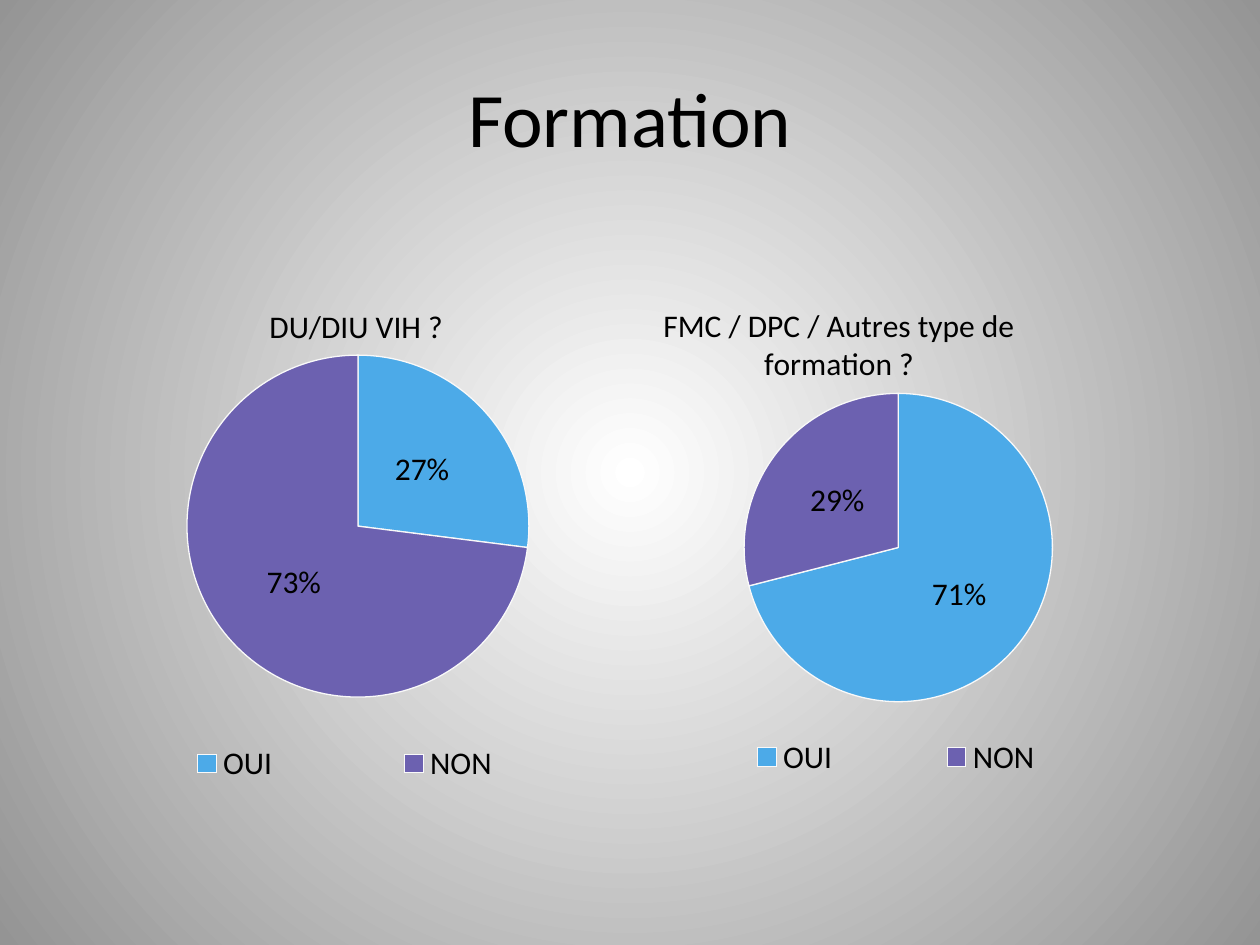
from dataclasses import dataclass

from lxml.etree import SubElement
from pptx import Presentation
from pptx.chart.data import CategoryChartData
from pptx.dml.color import RGBColor
from pptx.enum.chart import XL_CHART_TYPE, XL_LABEL_POSITION, XL_LEGEND_POSITION
from pptx.enum.text import MSO_ANCHOR, PP_ALIGN
from pptx.oxml import parse_xml
from pptx.oxml.ns import nsdecls, qn
from pptx.util import Cm, Pt


@dataclass(frozen=True)
class Theme:
    font: str = "Calibri"
    text: RGBColor = RGBColor(0, 0, 0)
    yes: RGBColor = RGBColor(0x4C, 0xAA, 0xE8)
    no: RGBColor = RGBColor(0x6C, 0x61, 0xB0)
    edge: RGBColor = RGBColor(0xF9, 0xF9, 0xF9)
    center: RGBColor = RGBColor(0xFF, 0xFF, 0xFF)
    rim: RGBColor = RGBColor(0x94, 0x94, 0x94)
    title_size: Pt = Pt(44)
    chart_size: Pt = Pt(18)


THEME = Theme()


def style_font(font, size):
    font.name = THEME.font
    font.size = size
    font.bold = False
    font.color.rgb = THEME.text


def set_layout(parent, index, **values):
    for old in parent.findall(qn("c:layout")):
        parent.remove(old)
    layout = parse_xml(f"<c:layout {nsdecls('c')}><c:manualLayout/></c:layout>")
    for tag, value in values.items():
        SubElement(layout[0], qn(f"c:{tag}")).set("val", str(value))
    parent.insert(index, layout)


def paint_background(s):
    fill = s.background.fill
    fill.gradient()
    for stop, color in zip(fill.gradient_stops, (THEME.center, THEME.rim)):
        stop.color.rgb = color
    lin = s.background._cSld.find(f".//{qn('a:lin')}")
    radial = parse_xml(
        f'<a:path {nsdecls("a")} path="circle">'
        '<a:fillToRect l="50000" t="50000" r="50000" b="50000"/></a:path>'
    )
    lin.getparent().replace(lin, radial)


def add_title(s, box, text):
    tf = s.shapes.add_textbox(*box).text_frame
    tf.word_wrap = True
    tf.vertical_anchor = MSO_ANCHOR.MIDDLE
    p = tf.paragraphs[0]
    p.alignment = PP_ALIGN.CENTER
    r = p.add_run()
    r.text = text
    style_font(r.font, THEME.title_size)


def add_pie(s, box, question, values, title_at, plot_box):
    data = CategoryChartData()
    data.categories = ["OUI", "NON"]
    data.add_series("Réponses", values)
    chart = s.shapes.add_chart(XL_CHART_TYPE.PIE, *box, data).chart
    style_font(chart.font, THEME.chart_size)

    chart.has_title = True
    title = chart.chart_title
    r = title.text_frame.paragraphs[0].add_run()
    r.text = question
    style_font(r.font, THEME.chart_size)
    title_xml = title._element
    set_layout(title_xml, 1, xMode="edge", yMode="edge", x=title_at[0], y=title_at[1])
    title_xml.find(qn("c:overlay")).set("val", "1")

    x, y, w, h = plot_box
    plot_area = chart._chartSpace.chart.plotArea
    set_layout(plot_area, 0, layoutTarget="inner", xMode="edge", yMode="edge",
               x=x, y=y, w=w, h=h)

    chart.has_legend = True
    legend = chart.legend
    legend.position = XL_LEGEND_POSITION.BOTTOM
    legend.include_in_layout = True
    style_font(legend.font, THEME.chart_size)
    set_layout(legend._element, 1, xMode="edge", yMode="edge", x=0, y=0.89, w=1, h=0.1)

    plot = chart.plots[0]
    plot.vary_by_categories = True
    series = plot.series[0]
    for i, color in enumerate((THEME.yes, THEME.no)):
        fmt = series.points[i].format
        fmt.fill.solid()
        fmt.fill.fore_color.rgb = color
        fmt.line.color.rgb = THEME.edge
        fmt.line.width = Pt(0.75)
    labels = series.data_labels
    labels.show_percentage = True
    labels.show_value = False
    labels.number_format = "#,##0%"
    labels.number_format_is_linked = False
    labels.position = XL_LABEL_POSITION.CENTER
    style_font(labels.font, THEME.chart_size)


def main():
    prs = Presentation()
    prs.slide_width, prs.slide_height = Cm(25.4), Cm(19.05)
    s = prs.slides.add_slide(prs.slide_layouts[6])
    paint_background(s)
    add_title(s, (Cm(1.27), Cm(0.76), Cm(22.86), Cm(3.18)), "Formation")
    add_pie(s, (Cm(1.52), Cm(5.72), Cm(10.85), Cm(10.29)), "DU/DIU VIH ?",
            (27, 73), (0.35, 0.03), (0.2, 0.14, 0.65, 0.67))
    add_pie(s, (Cm(13.16), Cm(5.69), Cm(9.8), Cm(10.19)),
            "FMC / DPC / Autres type de formation ?",
            (71, 29), (0.01, 0.03), (0.18, 0.22, 0.65, 0.61))
    prs.save("out.pptx")


if __name__ == "__main__":
    main()
